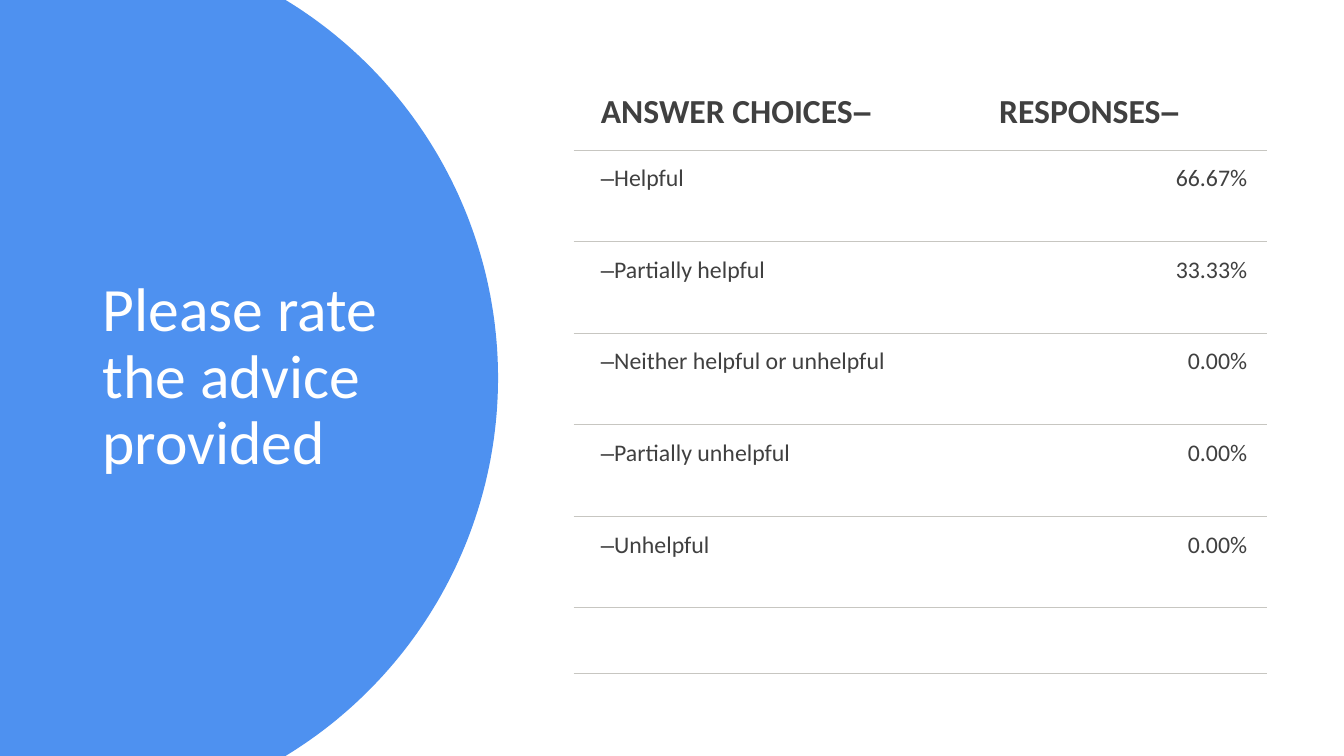
from math import asin, cos, sin

from lxml.etree import SubElement
from pptx import Presentation
from pptx.dml.color import RGBColor
from pptx.enum.shapes import MSO_SHAPE
from pptx.enum.text import MSO_ANCHOR, PP_ALIGN
from pptx.oxml.ns import qn
from pptx.util import Inches, Pt

COLORS = {"blue": "4E91F0", "white": "FFFFFF", "text": "404040", "rule": "C7C6C1"}
NO_STYLE_NO_GRID = "{2D5ABB26-0587-4C30-8999-92F81FD0307C}"
SLIDE_HEIGHT = 7.5

HEADINGS = ("ANSWER CHOICES", "RESPONSES")
RESULTS = [
    ("Helpful", "66.67%"),
    ("Partially helpful", "33.33%"),
    ("Neither helpful or unhelpful", "0.00%"),
    ("Partially unhelpful", "0.00%"),
    ("Unhelpful", "0.00%"),
]


def add_run(paragraph, text, size, color, font="Calibri", bold=False):
    run = paragraph.add_run()
    run.text = text
    run.font.name = font
    run.font.size = Pt(size)
    run.font.bold = bold
    run.font.color.rgb = RGBColor.from_string(COLORS[color])


def rule_below(cell):
    """Give the cell a thin bottom border and no other."""
    properties = cell._tc.get_or_add_tcPr()
    for side in ("lnL", "lnR", "lnT"):
        SubElement(SubElement(properties, qn(f"a:{side}"), w="0"), qn("a:noFill"))
    line = SubElement(properties, qn("a:lnB"), w=str(Pt(0.75)))
    fill = SubElement(line, qn("a:solidFill"))
    SubElement(fill, qn("a:srgbClr"), val=COLORS["rule"])


prs = Presentation()
prs.slide_width = Inches(13.33)
prs.slide_height = Inches(SLIDE_HEIGHT)
slide = prs.slides.add_slide(prs.slide_layouts[6])

# White backdrop, and a blue panel bounded on the right by a circular arc
backdrop = slide.shapes.add_shape(MSO_SHAPE.RECTANGLE, 0, 0,
                                  prs.slide_width, prs.slide_height)

radius, center_x, center_y = 4.39, 0.55, SLIDE_HEIGHT / 2
half_angle = asin(center_y / radius)
steps = 120
arc = []
for step in range(steps + 1):
    angle = half_angle * (2 * step / steps - 1)
    arc.append((Inches(center_x + radius * cos(angle)),
                Inches(center_y + radius * sin(angle))))
outline = slide.shapes.build_freeform(0, 0)
outline.add_line_segments(arc + [(0, Inches(SLIDE_HEIGHT))], close=True)
panel = outline.convert_to_shape()

for area, color in ((backdrop, "white"), (panel, "blue")):
    area.shadow.inherit = False
    area.fill.solid()
    area.fill.fore_color.rgb = RGBColor.from_string(COLORS[color])
    area.line.fill.background()

# Question
question = slide.shapes.add_textbox(Inches(0.92), Inches(0.71), Inches(3.23), Inches(6.09))
question.text_frame.word_wrap = True
question.text_frame.vertical_anchor = MSO_ANCHOR.MIDDLE
question_line = question.text_frame.paragraphs[0]
question_line.line_spacing = 0.9
add_run(question_line, "Please rate the advice provided", 44, "white")

# Response table, closed by an empty row
table_height, header_height, last_height = 5.91, 0.72, 0.65
answer_height = (table_height - header_height - last_height) / len(RESULTS)
row_heights = [header_height] + [answer_height] * len(RESULTS) + [last_height]

frame = slide.shapes.add_table(len(row_heights), 2, Inches(5.69), Inches(0.77),
                               Inches(6.88), Inches(table_height))
responses = frame.table
responses.first_row = False
responses.horz_banding = False
responses._tbl.tblPr.find(qn("a:tableStyleId")).text = NO_STYLE_NO_GRID
for column, width in zip(responses.columns, (3.95, 2.93)):
    column.width = Inches(width)
for row, height in zip(responses.rows, row_heights):
    row.height = Inches(height)
    for cell in row.cells:
        cell.margin_left = Inches(0.27)
        cell.margin_right = Inches(0.2)
        cell.margin_top = Inches(0.14)
        cell.margin_bottom = Inches(0.13)
        rule_below(cell)
        cell.fill.background()

for column_index, heading in enumerate(HEADINGS):
    heading_line = responses.cell(0, column_index).text_frame.paragraphs[0]
    add_run(heading_line, heading, 24, "text", bold=True)
    add_run(heading_line, "–", 24, "text", font="Arial", bold=True)

for row_index, (answer, share) in enumerate(RESULTS, start=1):
    answer_line = responses.cell(row_index, 0).text_frame.paragraphs[0]
    add_run(answer_line, "–", 17, "text", font="Arial")
    add_run(answer_line, answer, 17, "text")
    share_line = responses.cell(row_index, 1).text_frame.paragraphs[0]
    share_line.alignment = PP_ALIGN.RIGHT
    add_run(share_line, share, 17, "text")

prs.save("out.pptx")
